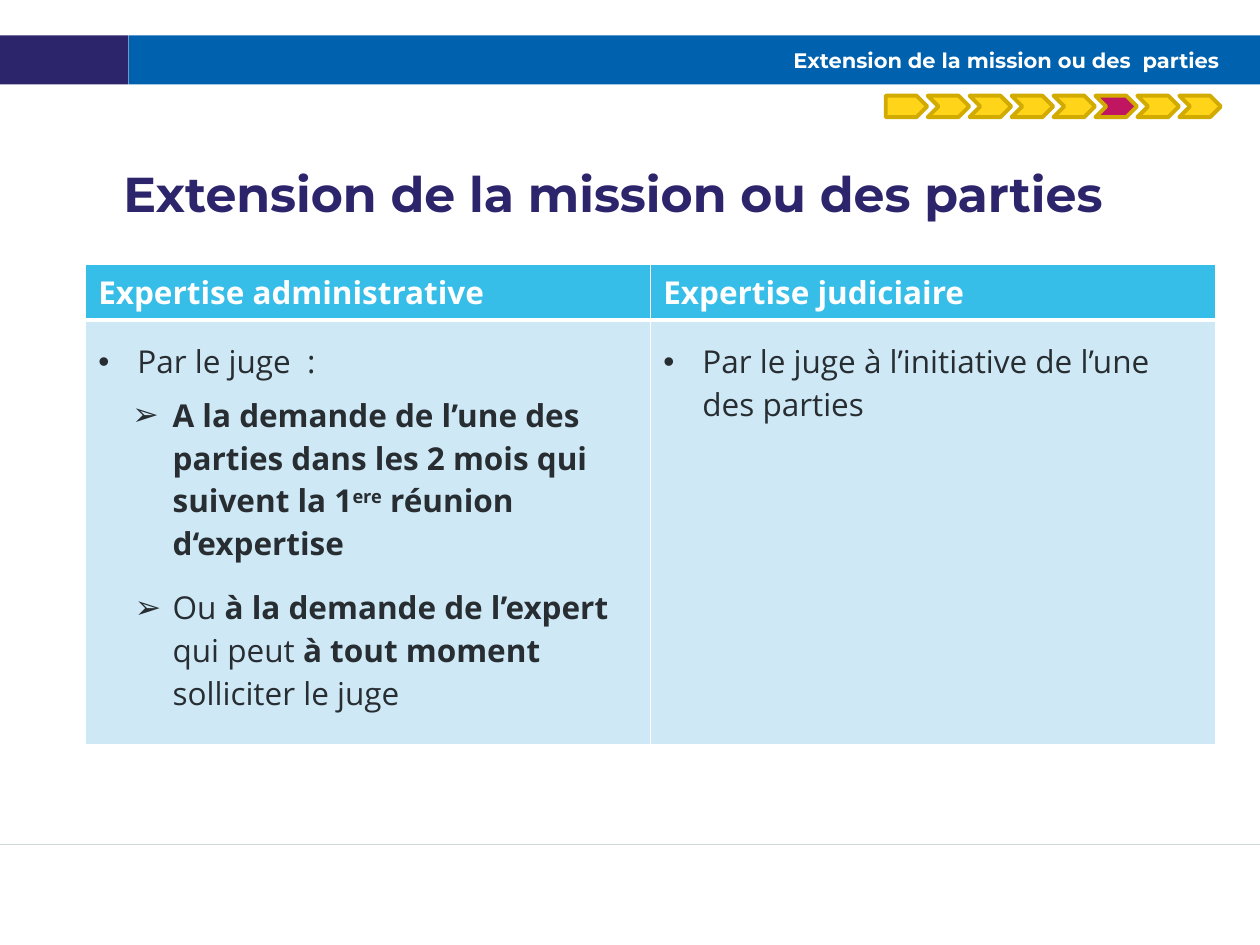
import lxml.etree
import pptx
import pptx.dml.color
import pptx.enum.shapes
import pptx.enum.text
import pptx.oxml.ns
import pptx.util
from pptx.util import Inches, Pt

RGBColor = pptx.dml.color.RGBColor
Shape = pptx.enum.shapes.MSO_SHAPE
Anchor = pptx.enum.text.MSO_ANCHOR
qn = pptx.oxml.ns.qn

NAVY = RGBColor(0x2C, 0x25, 0x6B)
BLUE = RGBColor(0x00, 0x62, 0xAE)
SKY = RGBColor(0x36, 0xBD, 0xE8)
PALE_BLUE = RGBColor(0xCE, 0xE8, 0xF6)
GREY = RGBColor(0xD2, 0xD9, 0xDA)
TEXT = RGBColor(0x27, 0x2D, 0x31)
WHITE = RGBColor(0xFF, 0xFF, 0xFF)
YELLOW = RGBColor(0xFF, 0xD4, 0x19)
GOLD = RGBColor(0xD2, 0xAB, 0x00)
MAGENTA = RGBColor(0xC0, 0x16, 0x62)


def set_indent(paragraph, left, first_line, bullet=None):
    properties = paragraph._p.get_or_add_pPr()
    properties.set("marL", str(Inches(left)))
    properties.set("indent", str(Inches(first_line)))
    if bullet:
        font = lxml.etree.SubElement(properties, qn("a:buFont"))
        font.set("typeface", "Arial")
        lxml.etree.SubElement(properties, qn("a:buChar")).set("char", bullet)
    else:
        lxml.etree.SubElement(properties, qn("a:buNone"))


def set_borders(cell, **widths):
    """Draw white borders; widths are points keyed by side: L, R, T, B."""
    properties = cell._tc.get_or_add_tcPr()
    for side, width in widths.items():
        line = lxml.etree.SubElement(properties, qn(f"a:ln{side}"))
        line.set("w", str(Pt(width)))
        fill = lxml.etree.SubElement(line, qn("a:solidFill"))
        lxml.etree.SubElement(fill, qn("a:srgbClr")).set("val", str(WHITE))


presentation = pptx.Presentation()
presentation.slide_width = Inches(10)
presentation.slide_height = Inches(7.5)
slide = presentation.slides.add_slide(presentation.slide_layouts[1])
shapes = slide.shapes
title, heading = slide.placeholders

# Banner and footer rule
for left, width, color in [(0, 1.02, NAVY), (1.02, 8.98, BLUE)]:
    bar = shapes.add_shape(Shape.RECTANGLE, Inches(left), Inches(0.28),
                           Inches(width), Inches(0.39))
    bar.shadow.inherit = False
    bar.fill.solid()
    bar.fill.fore_color.rgb = color
    bar.line.fill.background()

rule = shapes.add_connector(pptx.enum.shapes.MSO_CONNECTOR.STRAIGHT,
                            Inches(0), Inches(6.7), Inches(10), Inches(6.7))
rule.line.color.rgb = GREY
rule.line.width = Pt(0.75)
lxml.etree.SubElement(rule._element.spPr, qn("a:effectLst"))

# Title in the banner and heading below it
placeholders = [
    (title, "Extension de la mission ou des  parties",
     (1.1, 0.28, 8.58, 0.39), 12, WHITE, Anchor.MIDDLE),
    (heading, "Extension de la mission ou des parties",
     (0.68, 1.35, 8.98, 0.51), 28, NAVY, Anchor.TOP),
]
for shape, text, box, size, color, anchor in placeholders:
    shapes._spTree.append(shape._element)  # in front of the banner
    shape.left, shape.top, shape.width, shape.height = map(Inches, box)
    frame = shape.text_frame
    frame.text = text
    frame.word_wrap = True
    frame.auto_size = pptx.enum.text.MSO_AUTO_SIZE.NONE
    frame.vertical_anchor = anchor
    frame.margin_left = frame.margin_right = 0
    frame.margin_top = frame.margin_bottom = 0
    font = frame.paragraphs[0].runs[0].font
    font.name, font.size, font.bold = "Montserrat", Pt(size), True
    font.color.rgb = color

title.text_frame.paragraphs[0].alignment = pptx.enum.text.PP_ALIGN.RIGHT
heading_paragraph = heading.text_frame.paragraphs[0]
set_indent(heading_paragraph, 0.3, 0)
heading_paragraph.line_spacing = 0.9
heading_paragraph.space_before = Pt(0)

# Comparison table
table = shapes.add_table(2, 2, Inches(0.68), Inches(2.1),
                         Inches(8.97), Inches(3.31)).table
table.first_row = table.horz_banding = False
table.rows[0].height = Inches(0.42)
table.rows[1].height = Inches(2.89)

# Paragraph: left indent, first line, bullet, space before, space after,
# runs of (text, bold, superscript)
administrative = [
    (0.31, -0.31, "•", 0, 0, [("Par le juge  :", False, False)]),
    (0.59, -0.32, "➢", 6, 6, [
        ("A la demande de l’une des parties dans les 2 mois qui suivent la 1",
         True, False),
        ("ere", True, True),
        (" réunion d‘expertise", True, False)]),
    (0.59, -0.3, "➢", 6, 0, [
        ("Ou ", False, False),
        ("à la demande de l’expert ", True, False),
        ("qui peut ", False, False),
        ("à tout moment ", True, False),
        ("solliciter le juge", False, False)]),
]
judicial = [
    (0.31, -0.31, "•", 0, 0,
     [("Par le juge à l’initiative de l’une des parties", False, False)]),
]
columns = [("Expertise administrative", administrative, 0.24),
           ("Expertise judiciaire", judicial, 0.05)]

for column, (header, paragraphs, bottom_margin) in enumerate(columns):
    cell = table.cell(0, column)
    set_borders(cell, L=1, R=1, T=1, B=3)
    cell.fill.solid()
    cell.fill.fore_color.rgb = SKY
    cell.text_frame.text = header
    font = cell.text_frame.paragraphs[0].runs[0].font
    font.name, font.size, font.bold = "Open Sans", Pt(18), True
    font.color.rgb = WHITE

    cell = table.cell(1, column)
    set_borders(cell, L=1, R=1, T=3, B=1)
    cell.fill.solid()
    cell.fill.fore_color.rgb = PALE_BLUE
    cell.margin_top = Inches(0.16)
    cell.margin_bottom = Inches(bottom_margin)
    frame = cell.text_frame
    for index, (left, first, bullet, before, after, runs) in enumerate(paragraphs):
        paragraph = frame.add_paragraph() if index else frame.paragraphs[0]
        set_indent(paragraph, left, first, bullet)
        paragraph.space_before = Pt(before)
        paragraph.space_after = Pt(after)
        for text, bold, superscript in runs:
            run = paragraph.add_run()
            run.text = text
            run.font.name, run.font.size = "Open Sans", Pt(18)
            run.font.bold = bold
            run.font.color.rgb = TEXT
            if superscript:
                run._r.get_or_add_rPr().set("baseline", "30000")

# Progress arrows, the current step highlighted
STEP_COUNT, CURRENT_STEP = 8, 5
progress = shapes.add_group_shape()
for step in range(STEP_COUNT):
    arrow = progress.shapes.add_shape(
        Shape.CHEVRON if step else Shape.PENTAGON,
        Inches(7.03 + step * 2.33 / (STEP_COUNT - 1)), Inches(0.76),
        Inches(0.33), Inches(0.17))
    arrow.shadow.inherit = False
    arrow.fill.solid()
    arrow.fill.fore_color.rgb = MAGENTA if step == CURRENT_STEP else YELLOW
    arrow.line.color.rgb = GOLD
    arrow.line.width = Pt(2.25)

presentation.save("out.pptx")
